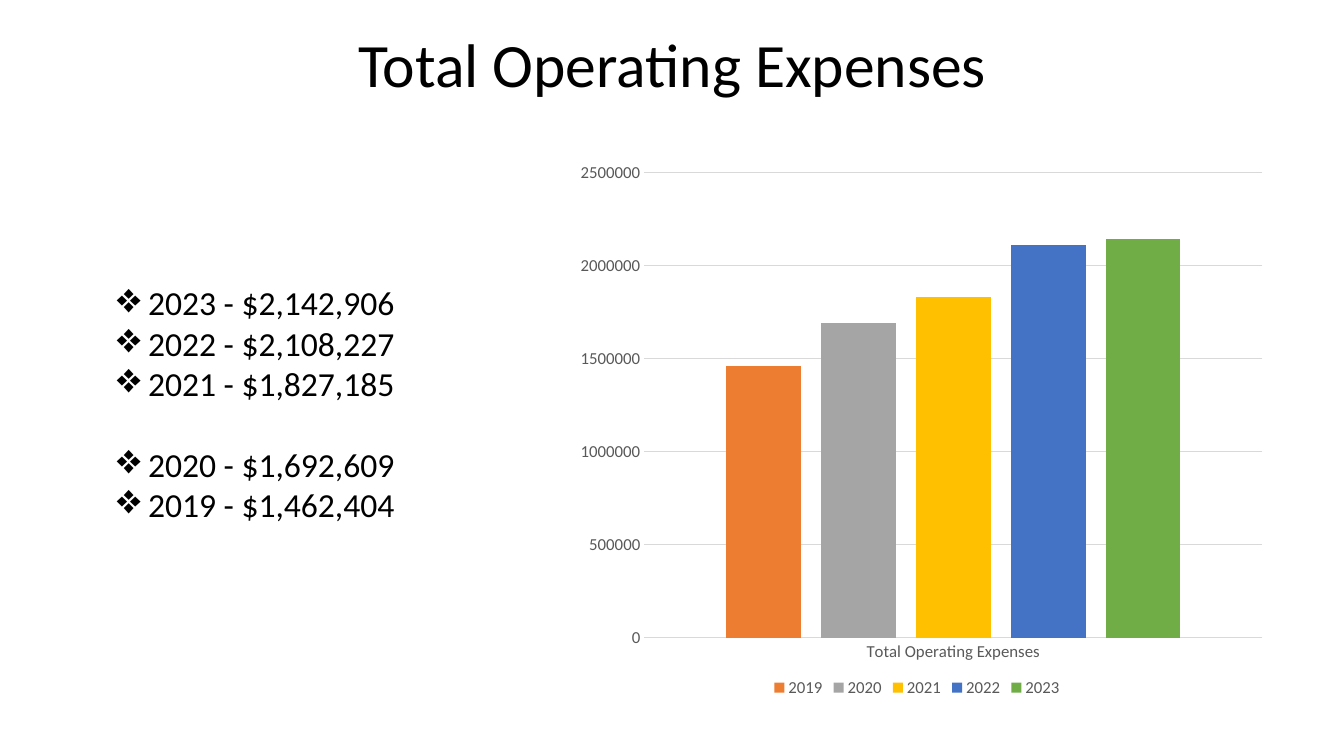
import pptx
import pptx.chart.data
import pptx.dml.color
import pptx.enum.chart
import pptx.enum.text
import pptx.oxml
import pptx.oxml.ns
import pptx.util

RGBColor = pptx.dml.color.RGBColor
BLACK = RGBColor(0x00, 0x00, 0x00)
GREY = RGBColor(0x59, 0x59, 0x59)
RULE = RGBColor(0xD9, 0xD9, 0xD9)
ORANGE = RGBColor(0xED, 0x7D, 0x31)
SILVER = RGBColor(0xA5, 0xA5, 0xA5)
GOLD = RGBColor(0xFF, 0xC0, 0x00)
BLUE = RGBColor(0x44, 0x72, 0xC4)
GREEN = RGBColor(0x70, 0xAD, 0x47)

FONT = "Calibri"
TITLE = "Total Operating Expenses"
WIDTH, HEIGHT = 13.33, 7.5
CHART_W, CHART_H = 6.89, 5.49
EXPENSES = [
    (2019, 1462404, ORANGE),
    (2020, 1692609, SILVER),
    (2021, 1827185, GOLD),
    (2022, 2108227, BLUE),
    (2023, 2142906, GREEN),
]
GAP_BEFORE_YEAR = 2020


def box(left, top, width, height):
    """Turn inches into a position tuple."""
    return tuple(pptx.util.Inches(n) for n in (left, top, width, height))


def set_font(font, size, color):
    font.name = FONT
    font.size = pptx.util.Pt(size)
    font.color.rgb = color


def set_line(line, color):
    line.color.rgb = color
    line.width = pptx.util.Pt(0.75)


def add_bullet(p, char, indent, percent):
    """Hang a bullet whose size is a percentage of the text's."""
    pPr = p._p.get_or_add_pPr()
    pPr.set("marL", str(pptx.util.Inches(indent)))
    pPr.set("indent", str(-pptx.util.Inches(indent)))
    for tag in (f'buSzPct {{}} val="{percent * 1000}"', f'buChar {{}} char="{char}"'):
        pPr.append(pptx.oxml.parse_xml(
            f'<a:{tag.format(pptx.oxml.ns.nsdecls("a"))}/>'))


def add_text(s, lines, place, size, align=None, bullet=None, gaps=()):
    """Write one paragraph per line; gaps holds the lines set off by a blank height."""
    tf = s.shapes.add_textbox(*place).text_frame
    tf.word_wrap = True
    for i, line in enumerate(lines):
        p = tf.paragraphs[0] if i == 0 else tf.add_paragraph()
        if align is not None:
            p.alignment = align
        if i in gaps:
            p.space_before = pptx.util.Pt(size * 1.2)
        if bullet:
            add_bullet(p, bullet, 0.31, 125)
        r = p.add_run()
        r.text = line
        set_font(r.font, size, BLACK)


def set_plot_area(chart, x, y, w, h):
    """Fix the inner plot area, in shares of the chart's size."""
    plot_area = chart._chartSpace.chart.plotArea
    for old in plot_area.findall(pptx.oxml.ns.qn("c:layout")):
        plot_area.remove(old)
    sizes = "".join(f'<c:{tag} val="{n}"/>'
                    for tag, n in zip("xywh", (x, y, w, h)))
    plot_area.insert(0, pptx.oxml.parse_xml(
        f'<c:layout {pptx.oxml.ns.nsdecls("c")}><c:manualLayout>'
        '<c:layoutTarget val="inner"/><c:xMode val="edge"/><c:yMode val="edge"/>'
        f'{sizes}</c:manualLayout></c:layout>'))


def style_axes(chart):
    for axis in (chart.category_axis, chart.value_axis):
        axis.major_tick_mark = pptx.enum.chart.XL_TICK_MARK.NONE
        axis.minor_tick_mark = pptx.enum.chart.XL_TICK_MARK.NONE
        set_font(axis.tick_labels.font, 12, GREY)
    set_line(chart.category_axis.format.line, RULE)
    values = chart.value_axis
    values.format.line.fill.background()
    values.minimum_scale, values.maximum_scale = 0, 2500000
    values.major_unit = 500000
    set_line(values.major_gridlines.format.line, RULE)


def add_expense_chart(s, place):
    data = pptx.chart.data.CategoryChartData()
    data.categories = [TITLE]
    for year, amount, _ in EXPENSES:
        data.add_series(str(year), [round(amount, -4)])
    chart = s.shapes.add_chart(
        pptx.enum.chart.XL_CHART_TYPE.COLUMN_CLUSTERED, *place, data).chart
    set_font(chart.font, 10, BLACK)
    chart.has_title = False
    chart.has_legend = True
    chart.legend.position = pptx.enum.chart.XL_LEGEND_POSITION.BOTTOM
    chart.legend.include_in_layout = False
    set_font(chart.legend.font, 12, GREY)
    plot = chart.plots[0]
    plot.vary_by_categories = False
    plot.gap_width, plot.overlap = 219, -27
    for series, (_, _, color) in zip(plot.series, EXPENSES):
        series.format.fill.solid()
        series.format.fill.fore_color.rgb = color
    style_axes(chart)
    set_plot_area(chart, 0.74 / CHART_W, 0.24 / CHART_H,
                  6.13 / CHART_W, 4.62 / CHART_H)


def main():
    prs = pptx.Presentation()
    prs.slide_width = pptx.util.Inches(WIDTH)
    prs.slide_height = pptx.util.Inches(HEIGHT)
    s = prs.slides.add_slide(prs.slide_layouts[6])

    add_text(s, [TITLE], box(0.22, 0.21, 12.9, 0.84), 44,
             align=pptx.enum.text.PP_ALIGN.CENTER)
    newest_first = EXPENSES[::-1]
    add_text(s, [f"{year} - ${amount:,}" for year, amount, _ in newest_first],
             box(1.06, 2.75, 3.19, 2.93), 24, bullet="❖",
             gaps=[i for i, row in enumerate(newest_first)
                   if row[0] == GAP_BEFORE_YEAR])
    add_expense_chart(s, box(5.65, 1.47, CHART_W, CHART_H))
    prs.save("out.pptx")


if __name__ == "__main__":
    main()
